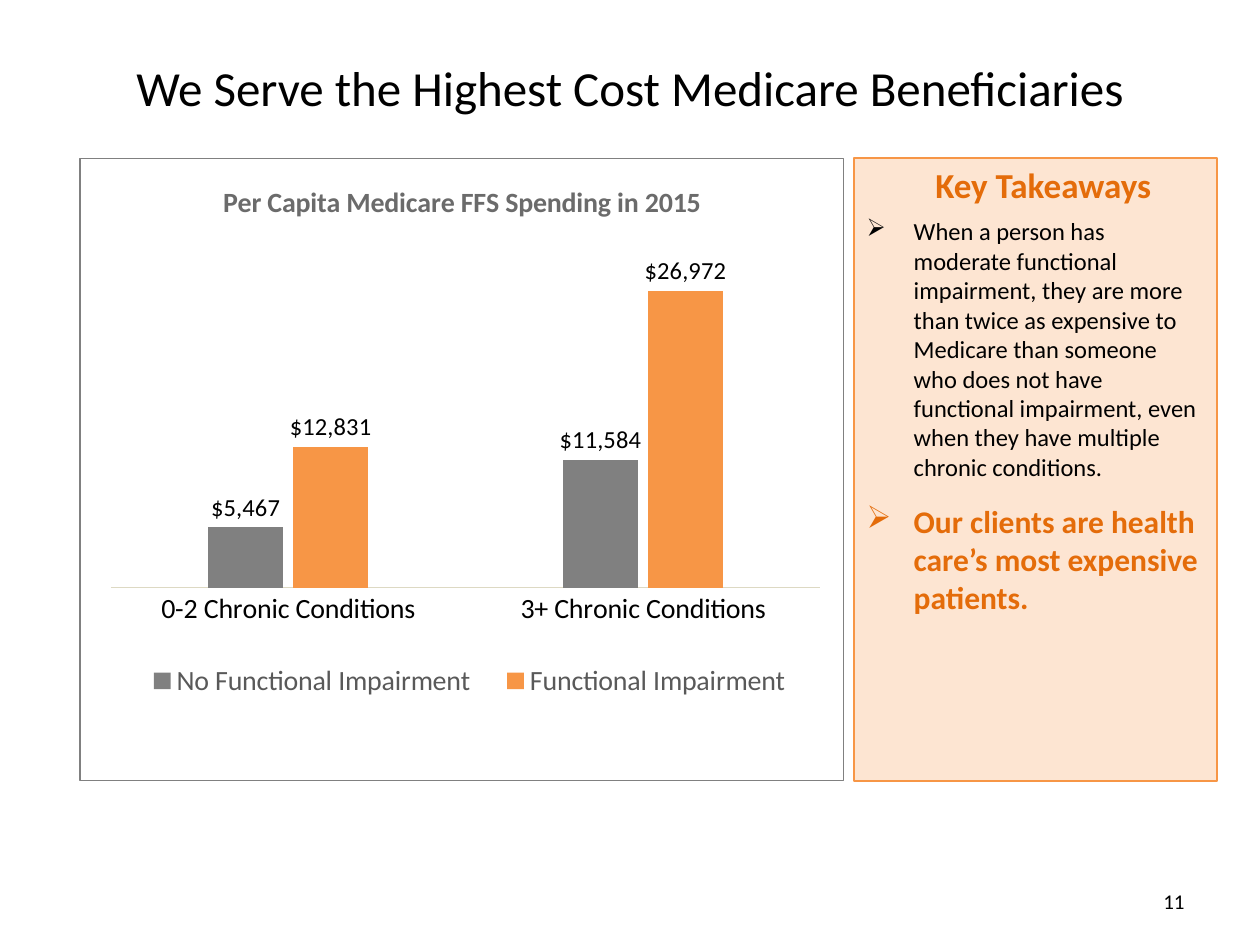
from collections import namedtuple
from dataclasses import dataclass

from lxml.etree import SubElement
from pptx import Presentation
from pptx.chart.data import CategoryChartData
from pptx.dml.color import RGBColor
from pptx.enum.chart import XL_CHART_TYPE, XL_LABEL_POSITION, XL_LEGEND_POSITION, XL_TICK_MARK
from pptx.enum.shapes import MSO_SHAPE
from pptx.enum.text import MSO_ANCHOR, PP_ALIGN
from pptx.oxml import parse_xml
from pptx.oxml.ns import nsdecls, qn
from pptx.util import Cm, Pt

Box = namedtuple("Box", "left top width height")


@dataclass(frozen=True)
class Theme:
    face: str = "Calibri"
    black: str = "000000"
    gray: str = "808080"
    orange: str = "F79646"
    accent: str = "E46C0A"
    head: str = "6B6B6B"
    legend: str = "595959"
    axis: str = "DDD9C3"
    title: int = 28
    lead: int = 20
    strong: int = 18
    chart: int = 16
    body: int = 14
    note: int = 12


THEME = Theme()


def color(code):
    return RGBColor.from_string(code)


def style(font, size, code=THEME.black, bold=False):
    font.name, font.size, font.bold = THEME.face, Pt(size), bold
    font.color.rgb = color(code)


def add_text(slide, box, text, size, align):
    shape = slide.shapes.add_textbox(*map(Cm, box))
    frame = shape.text_frame
    frame.word_wrap = True
    frame.vertical_anchor = MSO_ANCHOR.MIDDLE
    para = frame.paragraphs[0]
    para.text, para.alignment = text, align
    style(para.font, size)


def set_layout(node, index, box, inner=False):
    """Place a chart part by fractions of the chart's size."""
    for old in node.findall(qn("c:layout")):
        node.remove(old)
    layout = parse_xml(f"<c:layout {nsdecls('c')}><c:manualLayout/></c:layout>")
    rules = [("layoutTarget", "inner")] if inner else []
    rules += [("xMode", "edge"), ("yMode", "edge")]
    rules += zip("xywh", box)
    for tag, value in rules:
        SubElement(layout[0], qn(f"c:{tag}")).set("val", str(value))
    node.insert(index, layout)


def add_costs(slide, box):
    money = '"$"#,##0'
    data = CategoryChartData(number_format=money)
    data.categories = ["0-2 Chronic Conditions", "3+ Chronic Conditions"]
    data.add_series("No Functional Impairment", (5467, 11584))
    data.add_series("Functional Impairment", (12831, 26972))
    chart = slide.shapes.add_chart(
        XL_CHART_TYPE.COLUMN_CLUSTERED, *map(Cm, box), data).chart
    style(chart.font, 11)

    # Heading and legend
    chart.has_title = True
    para = chart.chart_title.text_frame.paragraphs[0]
    para.text = "Per Capita Medicare FFS Spending in 2015"
    style(para.font, THEME.chart, THEME.head, True)
    chart.has_legend = True
    legend = chart.legend
    legend.position = XL_LEGEND_POSITION.BOTTOM
    legend.include_in_layout = False
    style(legend.font, THEME.chart, THEME.legend)

    # Axes
    cats, vals = chart.category_axis, chart.value_axis
    cats.major_tick_mark = XL_TICK_MARK.NONE
    style(cats.tick_labels.font, THEME.chart)
    cats.format.line.color.rgb = color(THEME.axis)
    cats.format.line.width = Pt(0.75)
    vals.visible = False
    vals.has_major_gridlines = False
    vals.minimum_scale, vals.maximum_scale, vals.major_unit = 0, 30000, 10000

    # Columns
    plot = chart.plots[0]
    plot.gap_width, plot.overlap, plot.vary_by_categories = 262, -14, False
    for series, code in zip(plot.series, (THEME.gray, THEME.orange)):
        series.format.fill.solid()
        series.format.fill.fore_color.rgb = color(code)
        labels = series.data_labels
        labels.show_value = True
        labels.position = XL_LABEL_POSITION.OUTSIDE_END
        labels.number_format, labels.number_format_is_linked = money, False
        style(labels.font, THEME.body)

    # Layout and border
    root = chart.element
    set_layout(root.find(".//" + qn("c:plotArea")), 0, (0.04, 0.16, 0.93, 0.53), True)
    set_layout(root.find(".//" + qn("c:legend")), 1, (0.06, 0.8, 0.9, 0.08))
    root.find(qn("c:chart")).addnext(parse_xml(
        f'<c:spPr {nsdecls("c", "a")}><a:noFill/><a:ln w="{Pt(1)}"><a:solidFill>'
        f'<a:srgbClr val="{THEME.gray}"/></a:solidFill></a:ln></c:spPr>'))


def add_points(slide, box):
    panel = slide.shapes.add_shape(MSO_SHAPE.RECTANGLE, *map(Cm, box))
    panel.shadow.inherit = False
    panel.fill.solid()
    panel.fill.fore_color.rgb = color(THEME.orange)
    tint = panel.fill._xPr.find(".//" + qn("a:srgbClr"))
    SubElement(tint, qn("a:alpha")).set("val", "24000")
    panel.line.color.rgb = color(THEME.orange)
    panel.line.width = Pt(1)
    frame = panel.text_frame
    frame.word_wrap = True
    frame.vertical_anchor = MSO_ANCHOR.TOP

    # Heading
    para = frame.paragraphs[0]
    para.text, para.alignment = "Key Takeaways", PP_ALIGN.CENTER
    para.space_before = Pt(4)
    para._p.get_or_add_pPr().set("marL", str(Cm(0.3)))
    style(para.font, THEME.lead, THEME.accent, True)

    # Bullets
    points = (
        ("When a person has moderate functional impairment, they are more than "
         "twice as expensive to Medicare than someone who does not have functional "
         "impairment, even when they have multiple chronic conditions.",
         THEME.body, THEME.black, False),
        ("Our clients are health care’s most expensive patients.",
         THEME.strong, THEME.accent, True),
    )
    for text, size, code, bold in points:
        para = frame.add_paragraph()
        para.text, para.alignment = text, PP_ALIGN.LEFT
        para.space_before = para.space_after = Pt(6)
        props = para._p.get_or_add_pPr()
        props.set("marL", str(Cm(0.95)))
        props.set("indent", str(-Cm(0.95)))
        SubElement(props, qn("a:buChar")).set("char", "➢")
        style(para.font, size, code, bold)


def main():
    deck = Presentation()
    deck.slide_width, deck.slide_height = Cm(25.4), Cm(19.05)
    slide = deck.slides.add_slide(deck.slide_layouts[6])
    add_text(slide, Box(1.27, 0.76, 22.86, 1.98),
             "We Serve the Highest Cost Medicare Beneficiaries",
             THEME.title, PP_ALIGN.CENTER)
    body = Box(1.6, 3.18, 22.94, 12.57)
    side, gap = 7.32, 0.2
    add_costs(slide, body._replace(width=body.width - side - gap))
    add_points(slide, body._replace(left=body.left + body.width - side, width=side))
    add_text(slide, Box(18.21, 17.65, 5.92, 1.02), "11", THEME.note, PP_ALIGN.RIGHT)
    deck.save("out.pptx")


if __name__ == "__main__":
    main()
